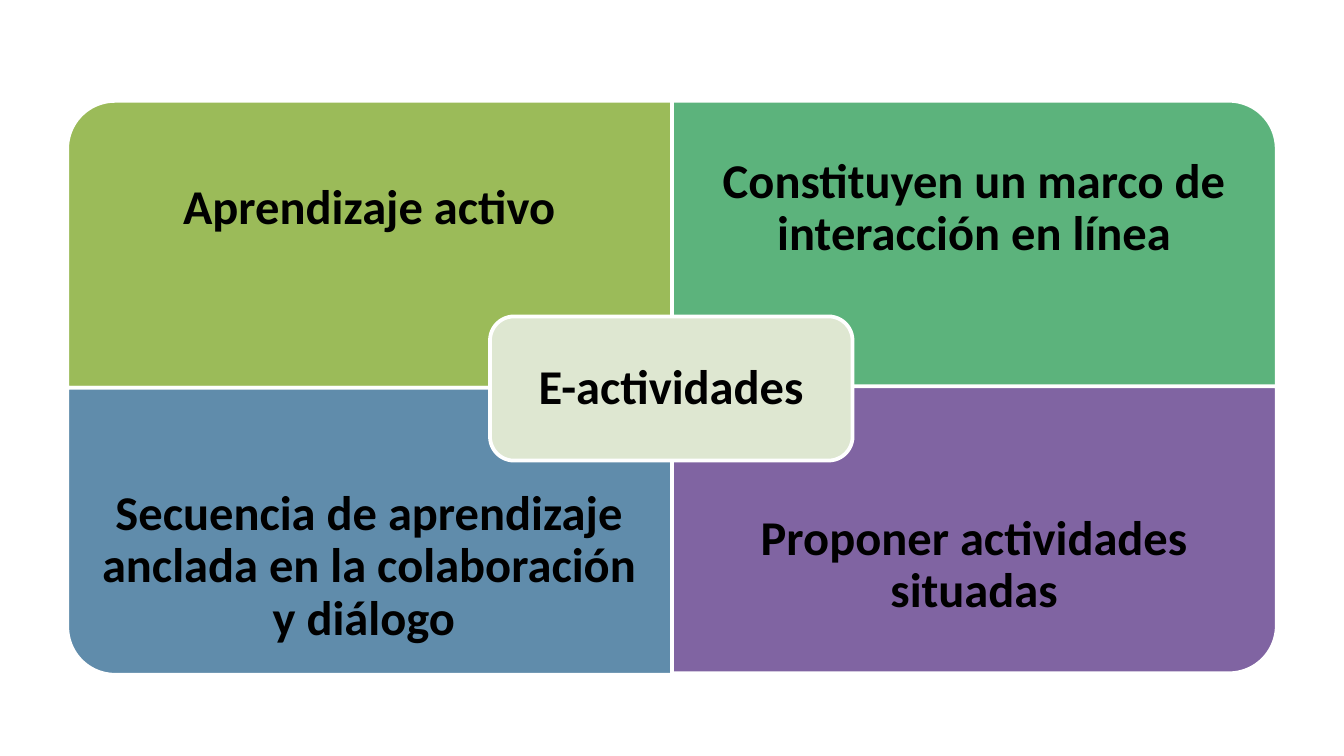
from pptx import Presentation
from pptx.dml.color import RGBColor
from pptx.enum.shapes import MSO_SHAPE as Shape
from pptx.enum.text import MSO_ANCHOR as Anchor, PP_ALIGN as Align
from pptx.util import Pt

PX = 9525  # 96 px to the inch
WIDTH, HEIGHT = 432, 205
LEFT, MIDDLE, TOP = 48, 480, 72
TEXT_HEIGHT = 154


def add_panel(kind, left, top, width, height, fill, rotation=0):
    """Add a white-edged shape that covers the given area once it is rotated."""
    left, top, width, height = (length * PX for length in (left, top, width, height))
    if rotation % 180:
        shift = (width - height) // 2
        left, top, width, height = left + shift, top - shift, height, width
    panel = page.shapes.add_shape(kind, left, top, width, height)
    panel.rotation = rotation
    panel.shadow.inherit = False
    panel.fill.solid()
    panel.fill.fore_color.rgb = RGBColor.from_string(fill)
    panel.line.color.rgb = RGBColor.from_string("FFFFFF")
    panel.line.width = Pt(2)


def add_text(text, left, top, width, height, inset=19, size=26, color="000000"):
    box = page.shapes.add_textbox(left * PX, top * PX, width * PX, height * PX)
    frame = box.text_frame
    frame.word_wrap = True
    frame.vertical_anchor = Anchor.MIDDLE
    frame.margin_left = frame.margin_right = inset * PX
    frame.margin_top = frame.margin_bottom = inset * PX
    para = frame.paragraphs[0]
    para.alignment = Align.CENTER
    para.line_spacing = 0.9
    span = para.add_run()
    span.text = text
    span.font.name = "Calibri"
    span.font.size = Pt(size)
    span.font.bold = True
    span.font.color.rgb = RGBColor.from_string(color)


deck = Presentation()
deck.slide_width, deck.slide_height = 960 * PX, 540 * PX
page = deck.slides.add_slide(deck.slide_layouts[6])

# Each quadrant turns its single round corner outwards; text keeps to the outer edge.
lower_offset = HEIGHT - TEXT_HEIGHT
quadrants = [
    ("Aprendizaje activo", LEFT, TOP, 0, "9BBB59", 270),
    ("Constituyen un marco de interacción en línea", MIDDLE, TOP, 0, "5CB37C", 0),
    ("Secuencia de aprendizaje anclada en la colaboración y diálogo ",
     LEFT, TOP + HEIGHT, lower_offset, "608CAB", 180),
    ("Proponer actividades situadas",
     MIDDLE, TOP + HEIGHT - 1, lower_offset, "8064A2", 90),
]
for text, left, top, text_offset, fill, rotation in quadrants:
    add_panel(Shape.ROUND_1_RECTANGLE, left, top, WIDTH, HEIGHT, fill, rotation)
    add_text(text, left, top + text_offset, WIDTH, TEXT_HEIGHT)

add_panel(Shape.ROUNDED_RECTANGLE, 350, 226, 259, 103, "DEE7D1")
add_text("E-actividades", 355, 231, 249, 93, inset=11)

deck.save("out.pptx")
